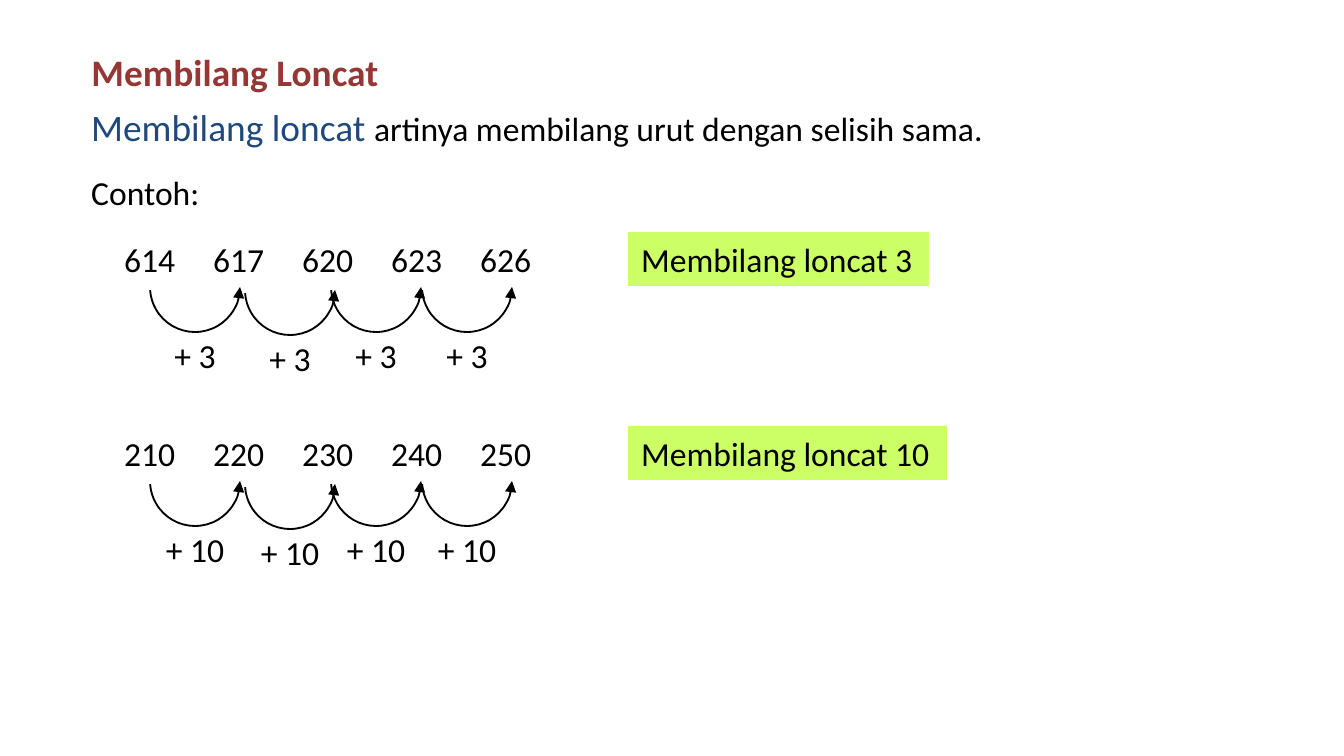
from lxml import etree
from pptx import Presentation
from pptx import util as u
from pptx.dml.color import RGBColor
from pptx.enum import shapes, text
from pptx.oxml.ns import qn

PX = u.Inches(10) / 1344
HUES = {"red": "953735", "blue": "1F497D", "black": "000000", "lime": "CCFF66"}
FRAME = {"word_wrap": False, "auto_size": text.MSO_AUTO_SIZE.NONE,
         "vertical_anchor": text.MSO_ANCHOR.TOP}


def place(*nums):
    """Turn px lengths into EMU."""
    return [u.Emu(round(n * PX)) for n in nums]


def write(shape, *runs, align=text.PP_ALIGN.LEFT):
    """Fill a shape with runs of (words, size, colour, bold)."""
    frame = shape.text_frame
    for key, value in FRAME.items():
        setattr(frame, key, value)
    para = frame.paragraphs[0]
    para.alignment = align
    for words, size, hue, bold in runs:
        run = para.add_run()
        run.text = words
        look = {"name": "Calibri", "size": u.Pt(size), "bold": bold}
        for key, value in look.items():
            setattr(run.font, key, value)
        run.font.color.rgb = RGBColor.from_string(HUES[hue])
    return para


deck = Presentation()
deck.slide_width, deck.slide_height = place(1344, 756)
slide = deck.slides.add_slide(deck.slide_layouts[5])
items = slide.shapes

# Heading and definition
title = items.title
title.left, title.top, title.width, title.height = place(78, 42, 317, 59)
write(title, ("Membilang Loncat", 20, "red", True))
write(items.add_textbox(*place(78, 98, 921, 59)),
      ("Membilang loncat ", 20, "blue", False),
      ("artinya membilang urut dengan selisih sama.", 18, "black", False))
write(items.add_textbox(*place(78, 165, 138, 54)),
      ("Contoh:", 18, "black", False))

# One row for each example: top, first number, step, width of its tag
ROWS = [(232, 614, 3, 301), (426, 210, 10, 319)]
JUMPS = [(150, 0), (245, 3), (331, 0), (422, 0)]  # left, drop
GAP = 89

for top, first, step, wide in ROWS:
    nums = [str(first + step * i) for i in range(5)]
    row = items.add_textbox(*place(111, top, 441, 54))
    para = write(row, ("\t".join(nums), 18, "black", False))
    row.text_frame.word_wrap = True
    tabs = etree.SubElement(para._p.get_or_add_pPr(), qn("a:tabLst"))
    for i in range(1, 5):
        etree.SubElement(tabs, qn("a:tab"), pos=str(place(GAP * i)[0]), algn="l")

    for left, drop in JUMPS:
        arc = items.add_shape(shapes.MSO_SHAPE.ARC,
                              *place(left, top + 10 + drop, 90, 90))
        arc.adjustments[0], arc.adjustments[1] = 110.46, 0
        arc._element.spPr.xfrm.set("flipV", "1")
        arc.shadow.inherit = False
        arc.fill.background()
        arc.line.width = u.Pt(1)
        arc.line.color.rgb = RGBColor.from_string(HUES["black"])
        etree.SubElement(arc.line._get_or_add_ln(), qn("a:tailEnd"),
                         type="triangle")
        label = items.add_textbox(*place(left, top + 96 + drop, 90, 54))
        write(label, (f"+ {step}", 18, "black", False),
              align=text.PP_ALIGN.CENTER)

    tag = items.add_shape(shapes.MSO_SHAPE.RECTANGLE, *place(628, top, wide, 54))
    tag.shadow.inherit = False
    tag.fill.solid()
    tag.fill.fore_color.rgb = RGBColor.from_string(HUES["lime"])
    tag.line.fill.background()
    write(tag, (f"Membilang loncat {step}", 18, "black", False))

deck.save("out.pptx")
